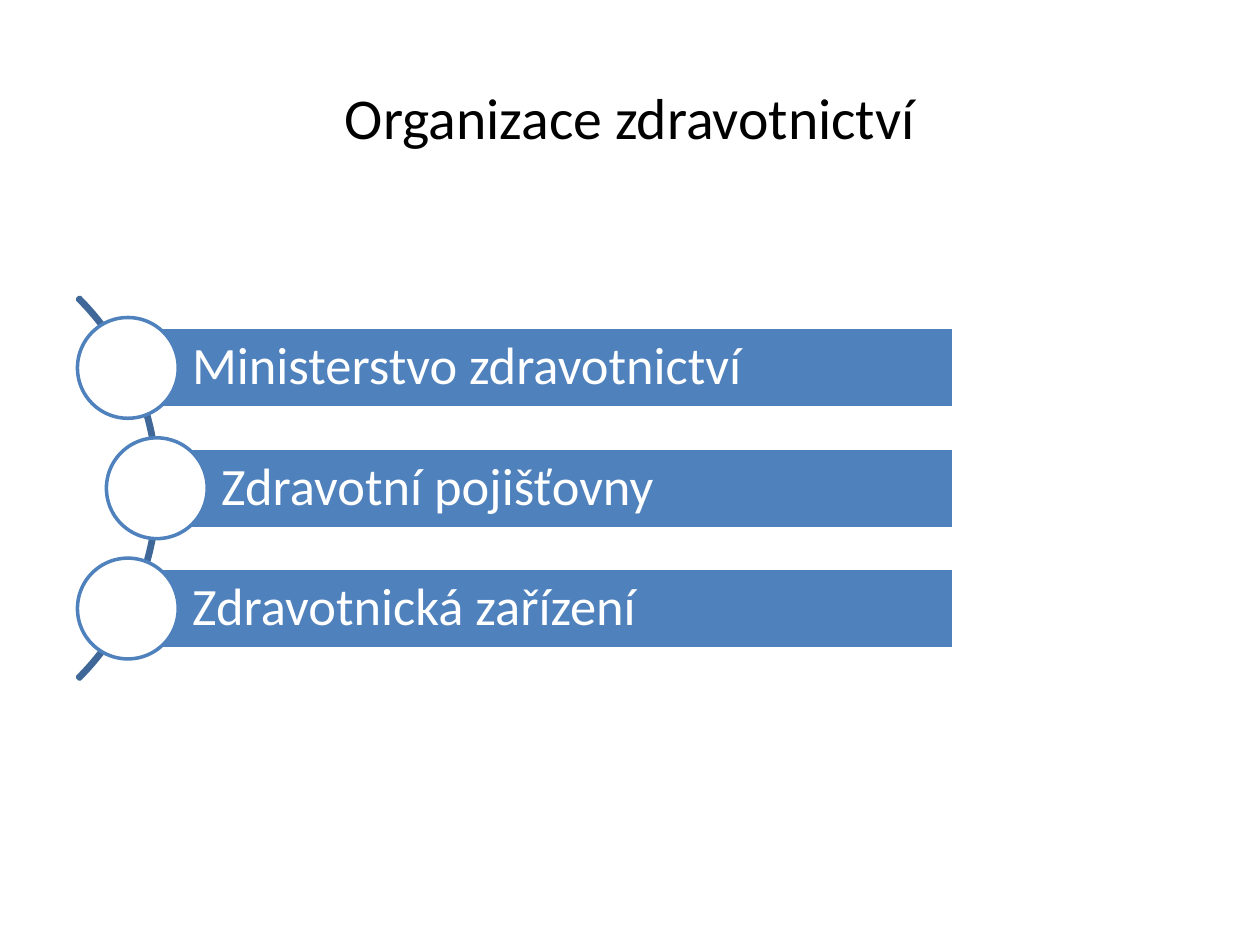
from dataclasses import dataclass

from pptx import Presentation
from pptx.dml.color import RGBColor
from pptx.enum.shapes import MSO_SHAPE
from pptx.enum.text import MSO_ANCHOR, PP_ALIGN
from pptx.shapes.autoshape import Shape
from pptx.slide import Slide
from pptx.util import Inches, Pt

BLOCK_ARC = MSO_SHAPE.BLOCK_ARC
RECTANGLE = MSO_SHAPE.RECTANGLE
OVAL = MSO_SHAPE.OVAL
MIDDLE = MSO_ANCHOR.MIDDLE
LEFT = PP_ALIGN.LEFT
CENTER = PP_ALIGN.CENTER

BLACK = RGBColor(0x00, 0x00, 0x00)
WHITE = RGBColor(0xFF, 0xFF, 0xFF)
BLUE = RGBColor(0x4F, 0x81, 0xBD)
DARK_BLUE = RGBColor(0x3F, 0x67, 0x97)

FONT = "Calibri"
BAR_RIGHT = 7.57
BAR_HEIGHT = 0.64
FIRST_CENTER = 2.92
ROW_STEP = 0.955
CIRCLE_SIZE = 0.8


@dataclass(frozen=True)
class Institution:
    name: str
    circle_center: float


INSTITUTIONS = [
    Institution("Ministerstvo zdravotnictví", 1.015),
    Institution("Zdravotní pojišťovny", 1.245),
    Institution("Zdravotnická zařízení", 1.015),
]


def write_text(shape: Shape, text: str, *, size: float, color: RGBColor,
               align: PP_ALIGN = LEFT, left_inset: float = 0.1,
               inset: float = 0.08, line_spacing: float = 1.0) -> None:
    frame = shape.text_frame
    frame.word_wrap = True
    frame.vertical_anchor = MIDDLE
    frame.margin_left = Inches(left_inset)
    frame.margin_top = frame.margin_right = frame.margin_bottom = Inches(inset)
    paragraph = frame.paragraphs[0]
    paragraph.alignment = align
    paragraph.line_spacing = line_spacing
    run = paragraph.add_run()
    run.text = text
    run.font.name = FONT
    run.font.size = Pt(size)
    run.font.color.rgb = color


def add_outlined(slide: Slide, kind: MSO_SHAPE, left: float, top: float,
                 width: float, height: float, line: RGBColor,
                 fill: RGBColor | None = None) -> Shape:
    shape = slide.shapes.add_shape(
        kind, Inches(left), Inches(top), Inches(width), Inches(height))
    shape.shadow.inherit = False
    if fill is None:
        shape.fill.background()
    else:
        shape.fill.solid()
        shape.fill.fore_color.rgb = fill
    shape.line.color.rgb = line
    shape.line.width = Pt(2)
    return shape


def add_institution(slide: Slide, institution: Institution, center_y: float) -> None:
    center_x = institution.circle_center
    bar = add_outlined(slide, RECTANGLE, center_x, center_y - BAR_HEIGHT / 2,
                       BAR_RIGHT - center_x, BAR_HEIGHT, WHITE, BLUE)
    write_text(bar, institution.name, size=30, color=WHITE,
               left_inset=0.51, line_spacing=0.9)
    add_outlined(slide, OVAL, center_x - CIRCLE_SIZE / 2, center_y - CIRCLE_SIZE / 2,
                 CIRCLE_SIZE, CIRCLE_SIZE, BLUE, WHITE)


def main() -> None:
    presentation = Presentation()
    presentation.slide_width = Inches(10)
    presentation.slide_height = Inches(7.5)
    slide = presentation.slides.add_slide(presentation.slide_layouts[6])

    title = slide.shapes.add_textbox(Inches(0.5), Inches(0.3), Inches(9), Inches(1.25))
    write_text(title, "Organizace zdravotnictví", size=33, color=BLACK, align=CENTER,
               inset=0.1)

    arc = add_outlined(slide, BLOCK_ARC, -3.03, 1.73, 4.29, 4.29, DARK_BLUE)
    for index, value in enumerate((189, 27, 0.006)):
        arc.adjustments[index] = value

    for row, institution in enumerate(INSTITUTIONS):
        add_institution(slide, institution, FIRST_CENTER + row * ROW_STEP)

    presentation.save("out.pptx")


if __name__ == "__main__":
    main()
